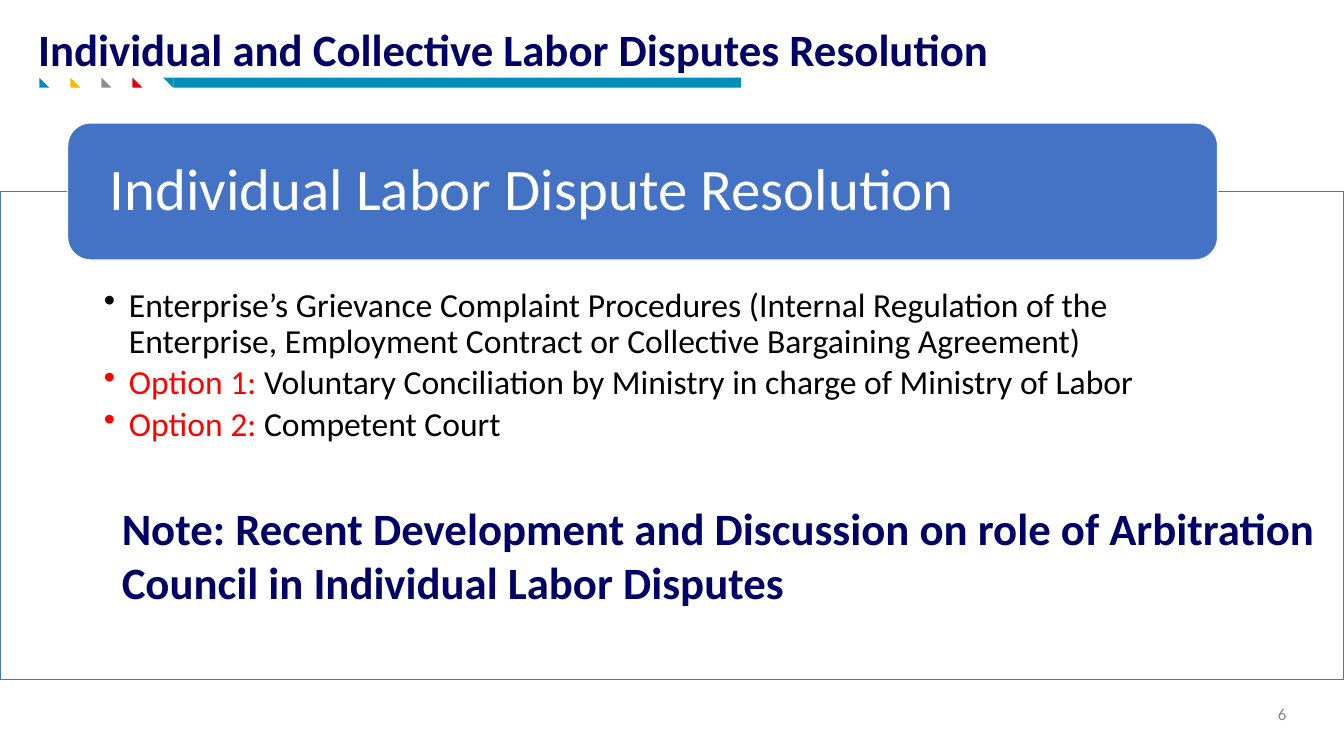
from lxml import etree
from pptx import Presentation
from pptx.dml.color import RGBColor
from pptx.enum.shapes import MSO_CONNECTOR, MSO_SHAPE
from pptx.enum.text import MSO_ANCHOR, PP_ALIGN
from pptx.oxml.ns import qn
from pptx.util import Inches, Pt

RECTANGLE = MSO_SHAPE.RECTANGLE
ROUNDED = MSO_SHAPE.ROUNDED_RECTANGLE
TRIANGLE = MSO_SHAPE.RIGHT_TRIANGLE
TOP, MIDDLE = MSO_ANCHOR.TOP, MSO_ANCHOR.MIDDLE
LEFT, RIGHT = PP_ALIGN.LEFT, PP_ALIGN.RIGHT

NAVY = RGBColor(0x00, 0x00, 0x66)
TEAL = RGBColor(0x00, 0x8D, 0xB7)
AMBER = RGBColor(0xF9, 0xB9, 0x00)
GRAY = RGBColor(0x8E, 0x8E, 0x8E)
CRIMSON = RGBColor(0xDE, 0x00, 0x10)
PAGE_GRAY = RGBColor(0x89, 0x89, 0x89)
BLUE = RGBColor(0x44, 0x72, 0xC4)
RED = RGBColor(0xFF, 0x00, 0x00)
BLACK = RGBColor(0x00, 0x00, 0x00)
WHITE = RGBColor(0xFF, 0xFF, 0xFF)

FONT = "Calibri"
TITLE = "Individual and Collective Labor Disputes Resolution"
HEADING = "Individual Labor Dispute Resolution"
PROCEDURES = [
    [("Enterprise’s Grievance Complaint Procedures (Internal Regulation of the "
      "Enterprise, Employment Contract or Collective Bargaining Agreement)", BLACK)],
    [("Option 1: ", RED),
     ("Voluntary Conciliation by Ministry in charge of Ministry of Labor", BLACK)],
    [("Option 2: ", RED), ("Competent Court", BLACK)],
]
NOTE = ("Note: Recent Development and Discussion on role of Arbitration "
        "Council in Individual Labor Disputes")
PAGE = "6"
TRIANGLE_COLORS = [TEAL, AMBER, GRAY, CRIMSON]

CELL = Inches(0.1)
COLUMNS, ROWS = 133.33, 75
TITLE_BOX = (2.8, -0.3, 130.6, 10.3)
NOTE_BOX = (11.1, 49.9, 130.6, 10.3)
PAGE_BOX = (105.3, 68.8, 23.3, 4)
FRAME = (0, 19, COLUMNS, 48.4)
HEADING_BAR = (6.7, 12.2, 114.1, 13.6)
RULE_LEFT, RULE_TOP, RULE_STEP = 3.9, 7.7, 3.08
BAR_LEFT, BAR_WIDTH = 17.2, 56.3


def grid(*cells):
    return [round(cell * CELL) for cell in cells]


def add_block(slide, preset, box, fill, line=None):
    block = slide.shapes.add_shape(preset, *grid(*box))
    block.shadow.inherit = False
    block.fill.solid()
    block.fill.fore_color.rgb = fill
    if line is None:
        block.line.fill.background()
    else:
        block.line.color.rgb = line
        block.line.width = Pt(1)
    return block


def write(holder, paragraphs, *, size, bold=False, align=LEFT, anchor=MIDDLE,
          insets=(1, 0.5, 1, 0.5), spacing=None, after=0, bullet=False):
    frame = holder.text_frame
    frame.word_wrap = True
    frame.vertical_anchor = anchor
    (frame.margin_left, frame.margin_top,
     frame.margin_right, frame.margin_bottom) = grid(*insets)
    for index, runs in enumerate(paragraphs):
        paragraph = frame.paragraphs[0] if index == 0 else frame.add_paragraph()
        paragraph.alignment = align
        paragraph.space_after = Pt(after)
        if spacing:
            paragraph.line_spacing = spacing
        if bullet:
            properties = paragraph._p.get_or_add_pPr()
            properties.set("marL", str(Inches(0.25)))
            properties.set("indent", str(-Inches(0.25)))
            etree.SubElement(properties, qn("a:buChar")).set("char", "•")
        for text, color in runs:
            run = paragraph.add_run()
            run.text = text
            run.font.name = FONT
            run.font.size = Pt(size)
            run.font.bold = bold
            run.font.color.rgb = color


def add_label(slide, box, text, color, **style):
    write(slide.shapes.add_textbox(*grid(*box)), [[(text, color)]], **style)


def add_title_rule(slide):
    for index, color in enumerate(TRIANGLE_COLORS):
        left = RULE_LEFT + index * RULE_STEP
        add_block(slide, TRIANGLE, (left, RULE_TOP, 1, 1), color)
    add_block(slide, RECTANGLE, (BAR_LEFT, RULE_TOP, BAR_WIDTH, 1), TEAL)
    bar_tip = add_block(slide, TRIANGLE, (BAR_LEFT - 1, RULE_TOP, 1, 1), TEAL)
    bar_tip.rotation = 180
    seam = slide.shapes.add_connector(
        MSO_CONNECTOR.STRAIGHT,
        *grid(BAR_LEFT + 0.1, RULE_TOP, BAR_LEFT + 0.1, RULE_TOP + 0.9))
    seam.line.color.rgb = TEAL
    seam.line.width = Pt(0.5)
    etree.SubElement(seam._element.spPr, qn("a:effectLst"))


def add_procedures(slide):
    frame = add_block(slide, RECTANGLE, FRAME, WHITE, BLUE)
    frame_color = frame._element.spPr.find(qn("a:solidFill"))[0]
    etree.SubElement(frame_color, qn("a:alpha")).set("val", "90000")
    write(frame, PROCEDURES, size=24, anchor=TOP, insets=(10.3, 9.6, 10.3, 1.9),
          spacing=0.9, after=3.6, bullet=True)
    heading_bar = add_block(slide, ROUNDED, HEADING_BAR, BLUE, WHITE)
    write(heading_bar, [[(HEADING, WHITE)]], size=42, insets=(3.5, 0, 3.5, 0),
          spacing=0.9)


def main():
    deck = Presentation()
    deck.slide_width, deck.slide_height = grid(COLUMNS, ROWS)
    slide = deck.slides.add_slide(deck.slide_layouts[6])
    add_title_rule(slide)
    add_label(slide, TITLE_BOX, TITLE, NAVY, size=32, bold=True)
    add_label(slide, PAGE_BOX, PAGE, PAGE_GRAY, size=12, align=RIGHT)
    add_procedures(slide)
    add_label(slide, NOTE_BOX, NOTE, NAVY, size=32, bold=True)
    deck.save("out.pptx")


if __name__ == "__main__":
    main()
